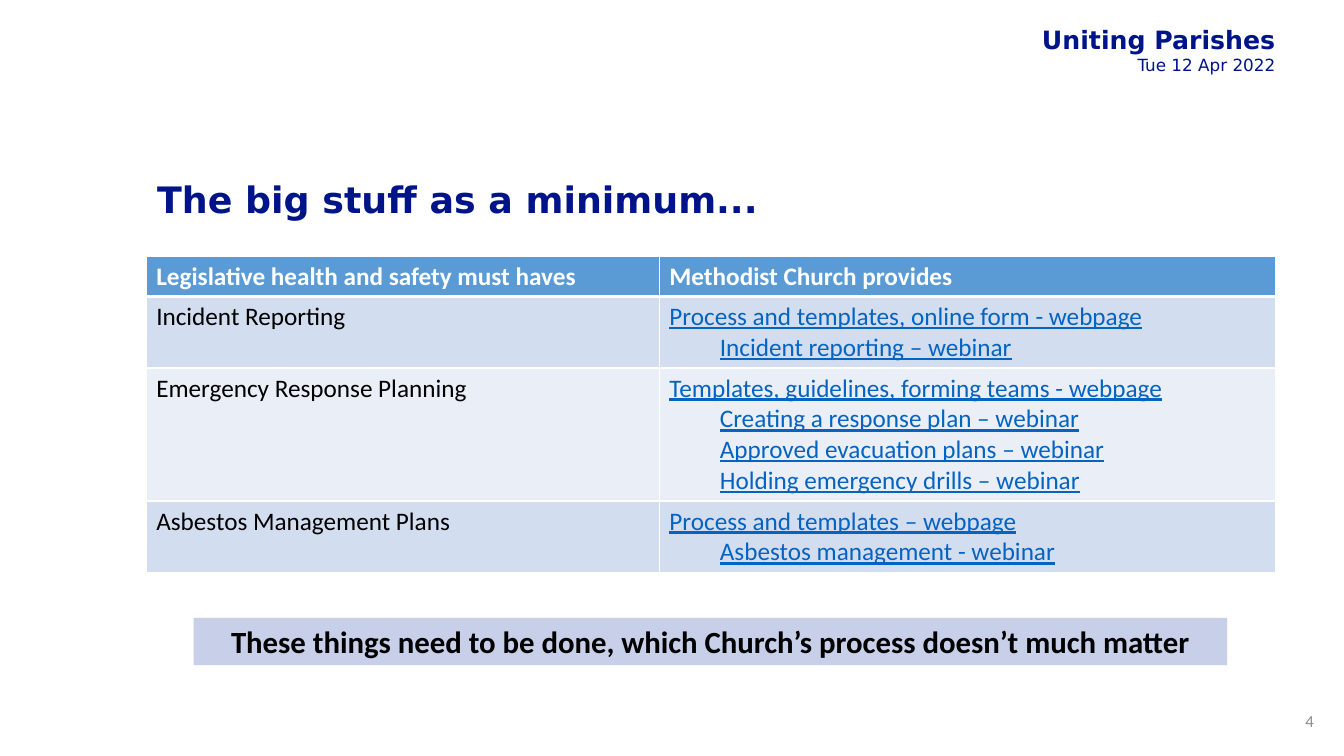
"""Builds the slide on the minimum health and safety duties of a parish."""
from lxml.etree import SubElement
from pptx import Presentation
from pptx.dml.color import RGBColor
from pptx.enum.shapes import MSO_SHAPE as Shape
from pptx.enum.text import MSO_ANCHOR as Anchor, PP_ALIGN as Align
from pptx.oxml.ns import qn
from pptx.util import Inches, Pt

COLORS = {
    "navy": "001489", "white": "FFFFFF", "black": "000000", "grey": "8C8C8C",
    "link": "0563C1", "header": "5B9BD5", "band": "D2DEEF", "plain": "EAEFF7",
    "banner": "C7CFE9",
}
HEADINGS = ("Legislative health and safety must haves", "Methodist Church provides")
DUTIES = [
    ("Incident Reporting",
     ["Process and templates, online form - webpage",
      "Incident reporting – webinar"]),
    ("Emergency Response Planning",
     ["Templates, guidelines, forming teams - webpage",
      "Creating a response plan – webinar",
      "Approved evacuation plans – webinar",
      "Holding emergency drills – webinar"]),
    ("Asbestos Management Plans",
     ["Process and templates – webpage",
      "Asbestos management - webinar"]),
]


def add_line(frame, text, size, color, bold=False, font="Calibri", align=Align.LEFT):
    para = frame.paragraphs[0]
    if para.runs:
        para = frame.add_paragraph()
    para.alignment = align
    span = para.add_run()
    span.text = text
    span.font.name = font
    span.font.size = Pt(size)
    span.font.bold = bold
    span.font.color.rgb = RGBColor.from_string(COLORS[color])
    return para


def add_box(left, top, width, height, anchor=Anchor.MIDDLE):
    box = page.shapes.add_textbox(Inches(left), Inches(top), Inches(width), Inches(height))
    frame = box.text_frame
    frame.word_wrap = True
    frame.vertical_anchor = anchor
    return frame


deck = Presentation()
deck.slide_width, deck.slide_height = Inches(13.33), Inches(7.5)
page = deck.slides.add_slide(deck.slide_layouts[6])

masthead = add_box(10.24, 0.2, 2.48, 0.88, Anchor.TOP)
masthead.word_wrap = False
masthead.margin_left = masthead.margin_right = Inches(0.07)
masthead.margin_top = masthead.margin_bottom = Inches(0.04)
add_line(masthead, "Uniting Parishes", 18, "navy", True, "DejaVu Sans", Align.RIGHT)
add_line(masthead, "Tue 12 Apr 2022", 12, "navy", False, "DejaVu Sans", Align.RIGHT)

title = add_box(1.46, 1.5, 11.2, 1.01)
heading = add_line(title, "The big stuff as a minimum...", 26, "navy", True, "DejaVu Sans")
heading.line_spacing = 0.9

table = page.shapes.add_table(
    len(DUTIES) + 1, 2, Inches(1.45), Inches(2.54), Inches(11.2), Inches(3.11)).table
for column, width in zip(table.columns, (5.09, 6.11)):
    column.width = Inches(width)
table.rows[0].height = Inches(0.4)
for cell, text in zip(table.rows[0].cells, HEADINGS):
    add_line(cell.text_frame, text, 18, "white", True)

for number, (duty, resources) in enumerate(DUTIES, 1):
    table.rows[number].height = Inches(0.1 + 0.305 * len(resources))
    add_line(table.cell(number, 0).text_frame, duty, 18, "black")
    for position, resource in enumerate(resources):
        para = add_line(table.cell(number, 1).text_frame, resource, 18, "link")
        para.runs[0].font.underline = True
        if position:
            para.level = 1
            para._p.get_or_add_pPr().set("marL", str(Inches(0.5)))

for number, row in enumerate(table.rows):
    fill = "header" if number == 0 else "band" if number % 2 else "plain"
    for cell in row.cells:
        properties = cell._tc.get_or_add_tcPr()
        for side in ("lnL", "lnR", "lnT", "lnB"):
            thick = (number, side) in ((0, "lnB"), (1, "lnT"))
            border = SubElement(properties, qn(f"a:{side}"), w=str(Pt(3 if thick else 1)))
            solid = SubElement(border, qn("a:solidFill"))
            SubElement(solid, qn("a:srgbClr"), val=COLORS["white"])
        cell.fill.solid()
        cell.fill.fore_color.rgb = RGBColor.from_string(COLORS[fill])

add_line(add_box(12.71, 6.95, 0.42, 0.4), "4", 12, "grey", align=Align.RIGHT)

banner = page.shapes.add_shape(
    Shape.RECTANGLE, Inches(1.92), Inches(6.13), Inches(10.25), Inches(0.47))
banner.shadow.inherit = False
banner.fill.solid()
banner.fill.fore_color.rgb = RGBColor.from_string(COLORS["banner"])
banner.line.fill.background()
banner.text_frame.word_wrap = True
add_line(banner.text_frame,
         "These things need to be done, which Church’s process doesn’t much matter",
         22, "black", True, align=Align.CENTER)

deck.save("out.pptx")
